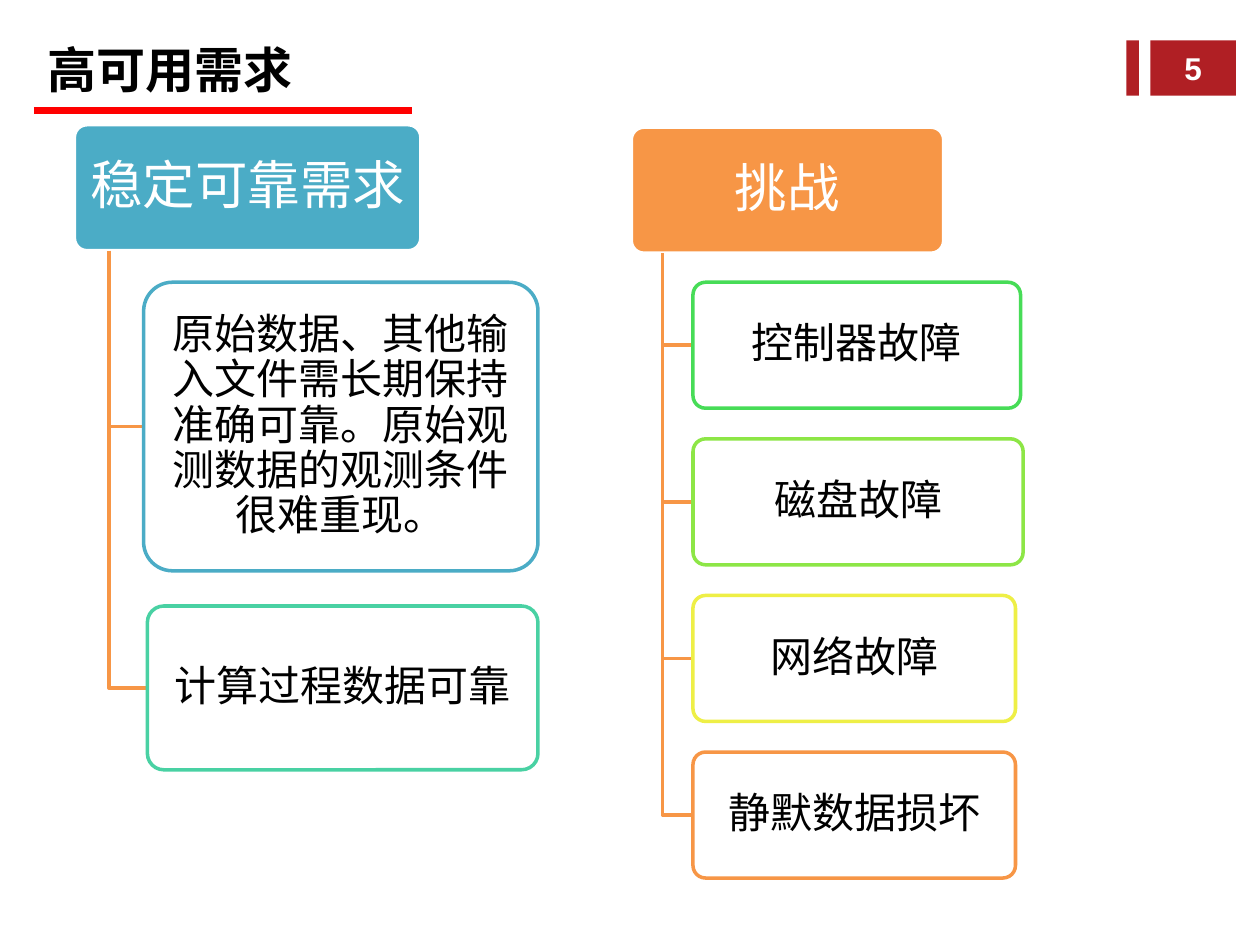
from pptx import Presentation
from pptx.dml.color import RGBColor
from pptx.enum.shapes import MSO_CONNECTOR, MSO_SHAPE
from pptx.enum.text import MSO_ANCHOR, MSO_AUTO_SIZE, PP_ALIGN
from pptx.oxml.ns import qn
from pptx.util import Inches, Pt
from lxml import etree

RECTANGLE, ROUNDED = MSO_SHAPE.RECTANGLE, MSO_SHAPE.ROUNDED_RECTANGLE
STRAIGHT = MSO_CONNECTOR.STRAIGHT
MIDDLE, LEFT, CENTER = MSO_ANCHOR.MIDDLE, PP_ALIGN.LEFT, PP_ALIGN.CENTER
TITLE_ONLY = 5
COLUMNS, ROWS = 100, 75

COLORS = {
    "white": "FFFFFF", "black": "000000", "crimson": "B01F24", "red": "FF0000",
    "blue": "4BACC6", "teal": "49D1A3", "orange": "F79646",
    "green": "47DC57", "lime": "8DE646", "yellow": "EEEF46",
}
CJK_FONT = "Noto Sans CJK SC"


class SlideBuilder:
    """Places elements on a grid of 100 columns by 75 rows."""

    def __init__(self, presentation):
        self.slide = presentation.slides.add_slide(presentation.slide_layouts[TITLE_ONLY])
        self.column = presentation.slide_width / COLUMNS
        self.row = presentation.slide_height / ROWS

    def x(self, columns):
        return round(columns * self.column)

    def y(self, rows):
        return round(rows * self.row)

    def color(self, name):
        return RGBColor.from_string(COLORS[name])

    def add_text(self, shape, text, size, color, font="Calibri", bold=False,
                 align=CENTER, spacing=1.0, insets=(0.1, 0.05)):
        frame = shape.text_frame
        frame.word_wrap = True
        frame.auto_size = MSO_AUTO_SIZE.NONE
        frame.vertical_anchor = MIDDLE
        frame.margin_left = frame.margin_right = Inches(insets[0])
        frame.margin_top = frame.margin_bottom = Inches(insets[1])
        paragraph = frame.paragraphs[0]
        paragraph.alignment = align
        paragraph.line_spacing = spacing
        paragraph.space_before = Pt(0)
        run = paragraph.add_run()
        run.text = text
        run.font.name, run.font.size, run.font.bold = font, Pt(size), bold
        run.font.color.rgb = self.color(color)
        east_asian = etree.SubElement(run.font._element, qn("a:ea"))
        east_asian.set("typeface", CJK_FONT)

    def title(self, text, left, top, width, height):
        shape = self.slide.shapes.title
        shape.left, shape.top = self.x(left), self.y(top)
        shape.width, shape.height = self.x(width), self.y(height)
        self.add_text(shape, text, 28, "black", CJK_FONT, bold=True, align=LEFT)

    def box(self, kind, left, top, width, height, fill, line=None, opacity=None):
        shape = self.slide.shapes.add_shape(
            kind, self.x(left), self.y(top), self.x(width), self.y(height))
        shape.shadow.inherit = False
        shape.fill.solid()
        shape.fill.fore_color.rgb = self.color(fill)
        if opacity is not None:
            color = shape._element.spPr.find(".//" + qn("a:srgbClr"))
            etree.SubElement(color, qn("a:alpha")).set("val", str(opacity * 1000))
        if line:
            shape.line.color.rgb = self.color(line)
            shape.line.width = Pt(2)
        else:
            shape.line.fill.background()
        if kind == ROUNDED:
            shape.adjustments[0] = 0.1
        return shape

    def rule(self, left, right, top, color, width):
        line = self.slide.shapes.add_connector(
            STRAIGHT, self.x(left), self.y(top), self.x(right), self.y(top))
        line.line.color.rgb = self.color(color)
        line.line.width = Pt(width)
        etree.SubElement(line._element.spPr, qn("a:effectLst"))

    def elbow(self, left, top, right, bottom):
        outline = self.slide.shapes.build_freeform(self.x(left), self.y(top))
        outline.add_line_segments(
            [(self.x(left), self.y(bottom)), (self.x(right), self.y(bottom))], close=False)
        shape = outline.convert_to_shape()
        shape.shadow.inherit = False
        shape.fill.background()
        shape.line.color.rgb = self.color("orange")
        shape.line.width = Pt(2)

    def tree(self, heading, left, top, width, color, children):
        """Draws a heading with child boxes hung from a trunk at a tenth of its width."""
        height = 10
        root = self.box(ROUNDED, left, top, width, height, color, "white")
        self.add_text(root, heading, 30, "white", spacing=0.9, insets=(0.06, 0.04))
        trunk = left + width / 10
        for text, child_left, child_top, child_width, child_height, line in children:
            self.elbow(trunk, top + height, child_left, child_top + child_height / 2)
            child = self.box(ROUNDED, child_left, child_top, child_width, child_height,
                             "white", line, opacity=90)
            self.add_text(child, text, 24, "black", spacing=0.9, insets=(0.05, 0.03))


def main():
    presentation = Presentation()
    presentation.slide_width, presentation.slide_height = Inches(10), Inches(7.5)
    builder = SlideBuilder(presentation)

    # Page number badge
    badge = builder.box(RECTANGLE, 91.3, 3.2, 6.8, 4.4, "crimson")
    builder.add_text(badge, "5", 18, "white", "Arial", bold=True)
    builder.box(RECTANGLE, 89.4, 3.2, 1, 4.4, "crimson")

    # Title and its underline
    builder.rule(2.7, 32.7, 8.8, "red", 4)
    builder.title("高可用需求", 2.8, 2.4, 59.8, 6.2)

    # Reliability needs
    builder.tree("稳定可靠需求", 5.9, 9.9, 27.5, "blue", [
        ("原始数据、其他输入文件需长期保持准确可靠。原始观测数据的观测条件很难重现。",
         11.4, 22.4, 31.3, 22.9, "blue"),
        ("计算过程数据可靠", 11.7, 48.1, 31, 13, "teal"),
    ])

    # Challenges, evenly stacked
    challenges = [
        ("控制器故障", 26, "green"),
        ("磁盘故障", 26.2, "lime"),
        ("网络故障", 25.6, "yellow"),
        ("静默数据损坏", 25.6, "orange"),
    ]
    first_top, step = 22.4, 12.43
    builder.tree("挑战", 50.1, 10.1, 24.8, "orange", [
        (text, 55, first_top + index * step, width, 10, line)
        for index, (text, width, line) in enumerate(challenges)
    ])

    presentation.save("out.pptx")


if __name__ == "__main__":
    main()
